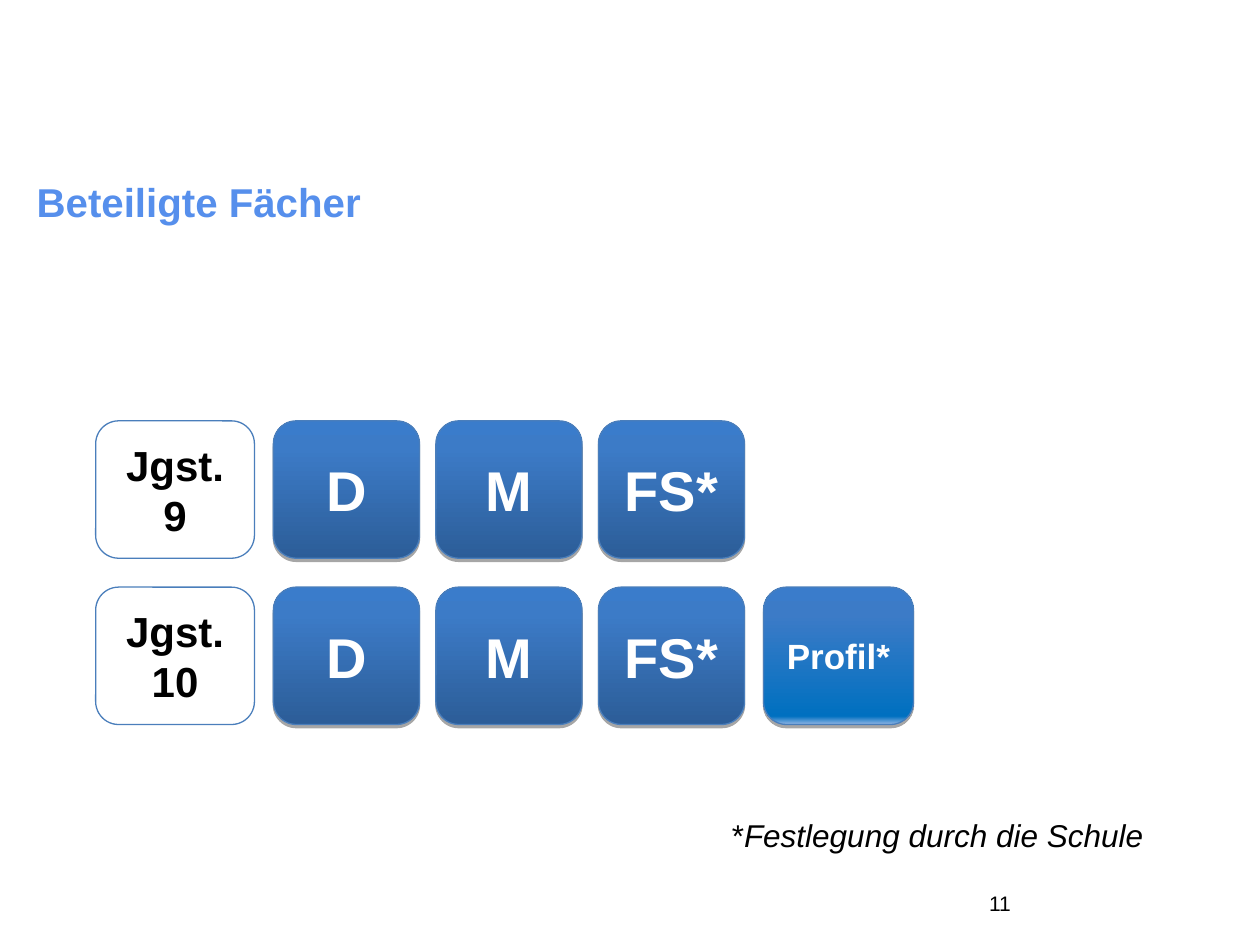
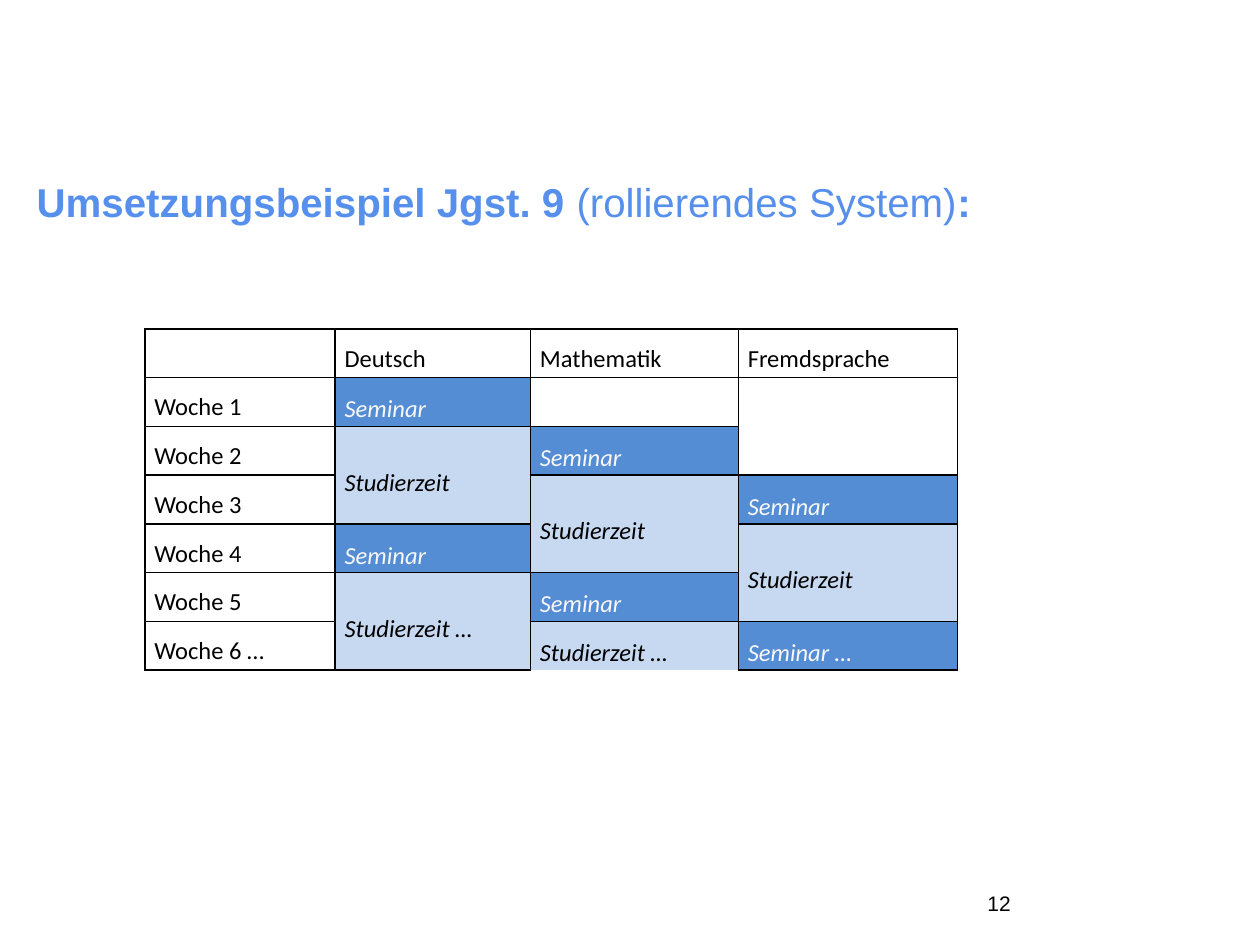
from collections import namedtuple
from dataclasses import dataclass
from itertools import cycle

from lxml.etree import SubElement as Sub
from pptx import Presentation
from pptx.dml.color import RGBColor as Rgb
from pptx.enum.shapes import MSO_SHAPE as Shape
from pptx.enum.text import MSO_ANCHOR as Anchor, MSO_AUTO_SIZE as Fit, PP_ALIGN as Align
from pptx.oxml.ns import qn
from pptx.util import Inches, Pt

COLS, ROWS = 100, 75
Box = namedtuple("Box", "x y w h")


@dataclass(frozen=True)
class Theme:
    sans: str = "Arial"
    grid: str = "Calibri"
    title: str = "568FEC"
    ink: str = "000000"
    white: str = "FFFFFF"
    pale: str = "F8F8F8"
    edge: str = "4A7EBB"
    lesson: str = "548DD4"
    study: str = "C6D9F1"
    deep: tuple = ((0, "2C5D98"), (80, "3C7BC7"), (100, "3A7CCB"))
    bright: tuple = ((0, "8EB4E3"), (6, "0070C0"), (80, "3C7BC7"), (100, "3A7CCB"))
    head: int = 23
    huge: int = 32
    large: int = 24
    mid: int = 20
    note: int = 18
    cell: int = 14
    small: int = 12


T = Theme()


def unit(n):
    """Turn grid units into a length: the slide is COLS by ROWS of them."""
    return Inches(10 * n / COLS)


def place(box):
    return [unit(n) for n in box]


def add_run(para, text, size, color=T.ink, bold=False, italic=False, face=T.sans):
    run = para.add_run()
    run.text = text
    font = run.font
    font.name, font.size, font.bold, font.italic = face, Pt(size), bold, italic
    font.color.rgb = Rgb.from_string(color)


def add_color(parent, color):
    return Sub(parent, qn("a:srgbClr"), val=color)


def add_title(slide, box, *parts):
    """Fill the title from (text, bold) parts."""
    title = slide.shapes.title
    title.left, title.top, title.width, title.height = place(box)
    frame = title.text_frame
    frame.auto_size, frame.vertical_anchor = Fit.NONE, Anchor.TOP
    para = frame.paragraphs[0]
    para.alignment = Align.LEFT
    for text, bold in parts:
        add_run(para, text, T.head, T.title, bold)


def add_text(slide, box, *parts, align=Align.LEFT, anchor=Anchor.TOP):
    """Add a line of text from (text, size, italic) parts."""
    frame = slide.shapes.add_textbox(*place(box)).text_frame
    frame.word_wrap, frame.vertical_anchor = True, anchor
    para = frame.paragraphs[0]
    para.alignment = align
    for text, size, italic in parts:
        add_run(para, text, size, italic=italic)


def add_slide(deck, number, *title):
    slide = deck.slides.add_slide(deck.slide_layouts[5])
    add_title(slide, Box(1.9, 13.6, 78.1, 4.5), *title)
    add_text(slide, Box(67, 68, 14.2, 5.2), (number, T.small, False),
             align=Align.RIGHT, anchor=Anchor.BOTTOM)
    return slide


def add_tile(slide, box, text, size, stops=None):
    """Add a rounded tile; with colour stops it is shaded and casts a shadow."""
    tile = slide.shapes.add_shape(Shape.ROUNDED_RECTANGLE, *place(box))
    tile.line.color.rgb = Rgb.from_string(T.edge)
    tile.line.width = Pt(0.75)
    tile.shadow.inherit = False
    if stops:
        shade(tile, stops)
    else:
        tile.fill.background()
    frame = tile.text_frame
    frame.vertical_anchor = Anchor.MIDDLE
    para = frame.paragraphs[0]
    para.alignment = Align.CENTER
    add_run(para, text, size, T.white if stops else T.ink, bold=True)


def shade(tile, stops):
    tile.fill.gradient()
    tile.fill.gradient_angle = 90
    props = tile.element.spPr
    ramp = props.find(".//" + qn("a:gsLst"))
    ramp.clear()
    for share, color in stops:
        add_color(Sub(ramp, qn("a:gs"), pos=str(share * 1000)), color)
    drop = Sub(props.find(qn("a:effectLst")), qn("a:outerShdw"), blurRad="0",
               dist=str(Pt(1.8)), dir="5400000", rotWithShape="0")
    Sub(add_color(drop, T.ink), qn("a:alpha"), val="35000")


def add_tiles(slide, box):
    """Lay out one row of subject tiles per school year."""
    high, pitch = 10.9, box.h - 10.9
    for row, year in enumerate(("9", "10")):
        top = box.y + row * pitch
        add_tile(slide, Box(box.x, top, 12.6, high), "Jgst. " + year, T.large)
        for col, name in enumerate(("D", "M", "FS*")):
            left = box.x + 14.1 + col * 12.9
            add_tile(slide, Box(left, top, 11.6, high), name, T.huge, T.deep)
    wide = 11.9
    add_tile(slide, Box(box.x + box.w - wide, top, wide, high), "Profil*", T.mid, T.bright)


def set_edges(cell, open_end):
    props = cell._tc.get_or_add_tcPr()
    for side in "LRTB":
        line = Sub(props, qn("a:ln" + side), w=str(Pt(1)))
        if side == "B" and open_end:
            Sub(line, qn("a:noFill"))
        else:
            add_color(Sub(line, qn("a:solidFill")), T.ink)


def fill_cell(cell, text, color=T.ink, fill=None, italic=False):
    if fill:
        cell.fill.solid()
        cell.fill.fore_color.rgb = Rgb.from_string(fill)
        cell.vertical_anchor = Anchor.MIDDLE
    para = cell.text_frame.paragraphs[0]
    para.alignment, para.line_spacing = Align.JUSTIFY, 1.5
    add_run(para, text, T.cell, color, italic=italic, face=T.grid)


def plan(lead, weeks):
    """Yield (row, span, kind): one seminar week, then two study weeks, from week lead."""
    row = lead + 1
    for kind, span in cycle((("Seminar", 1), ("Studierzeit", 2))):
        if row > weeks:
            return
        yield row, min(span, weeks + 1 - row), kind
        row += span


def add_weeks(slide, box, names, weeks):
    """Add the rota, in which each subject starts a week after the one before."""
    table = slide.shapes.add_table(weeks + 1, len(names) + 1, *place(box)).table
    table.first_row = table.horz_banding = False
    for col, wide in zip(table.columns, (15.1, 15.5, 16.5, 17.4)):
        col.width = unit(wide)
    for row in table.rows:
        row.height = unit(box.h / (weeks + 1))
    for cell in table.iter_cells():
        cell.margin_left = cell.margin_right = unit(0.75)
        cell.margin_top = cell.margin_bottom = 0
        open_end = cell is not None and cell._tc is table.cell(weeks, 2)._tc
        set_edges(cell, open_end)
        cell.fill.background()
    for week in range(1, weeks + 1):
        fill_cell(table.cell(week, 0), f"Woche {week}" + (" …" if week == weeks else ""))
    for lead, name in enumerate(names):
        col = lead + 1
        fill_cell(table.cell(0, col), name)
        if lead > 1:
            table.cell(1, col).merge(table.cell(lead, col))
        for row, span, kind in plan(lead, weeks):
            last = row + span - 1
            cell = table.cell(row, col)
            if span > 1:
                cell.merge(table.cell(last, col))
            look = (T.pale, T.lesson) if kind == "Seminar" else (T.ink, T.study)
            fill_cell(cell, kind + (" …" if last == weeks else ""), *look, italic=True)


def main():
    deck = Presentation()
    deck.slide_width, deck.slide_height = unit(COLS), unit(ROWS)

    slide = add_slide(deck, "11", ("Beteiligte Fächer", True))
    add_tiles(slide, Box(7.6, 33.4, 64.9, 24.1))
    add_text(slide, Box(57.1, 64.3, 36.6, 4), ("*", T.note, False),
             ("Festlegung durch die Schule", T.note, True))

    slide = add_slide(deck, "12", ("Umsetzungsbeispiel Jgst. 9 ", True),
                      ("(rollierendes System)", False), (":", True))
    add_weeks(slide, Box(11.5, 26.1, 64.5, 27.1),
              ("Deutsch", "Mathematik", "Fremdsprache"), 6)
    deck.save("out.pptx")


if __name__ == "__main__":
    main()
